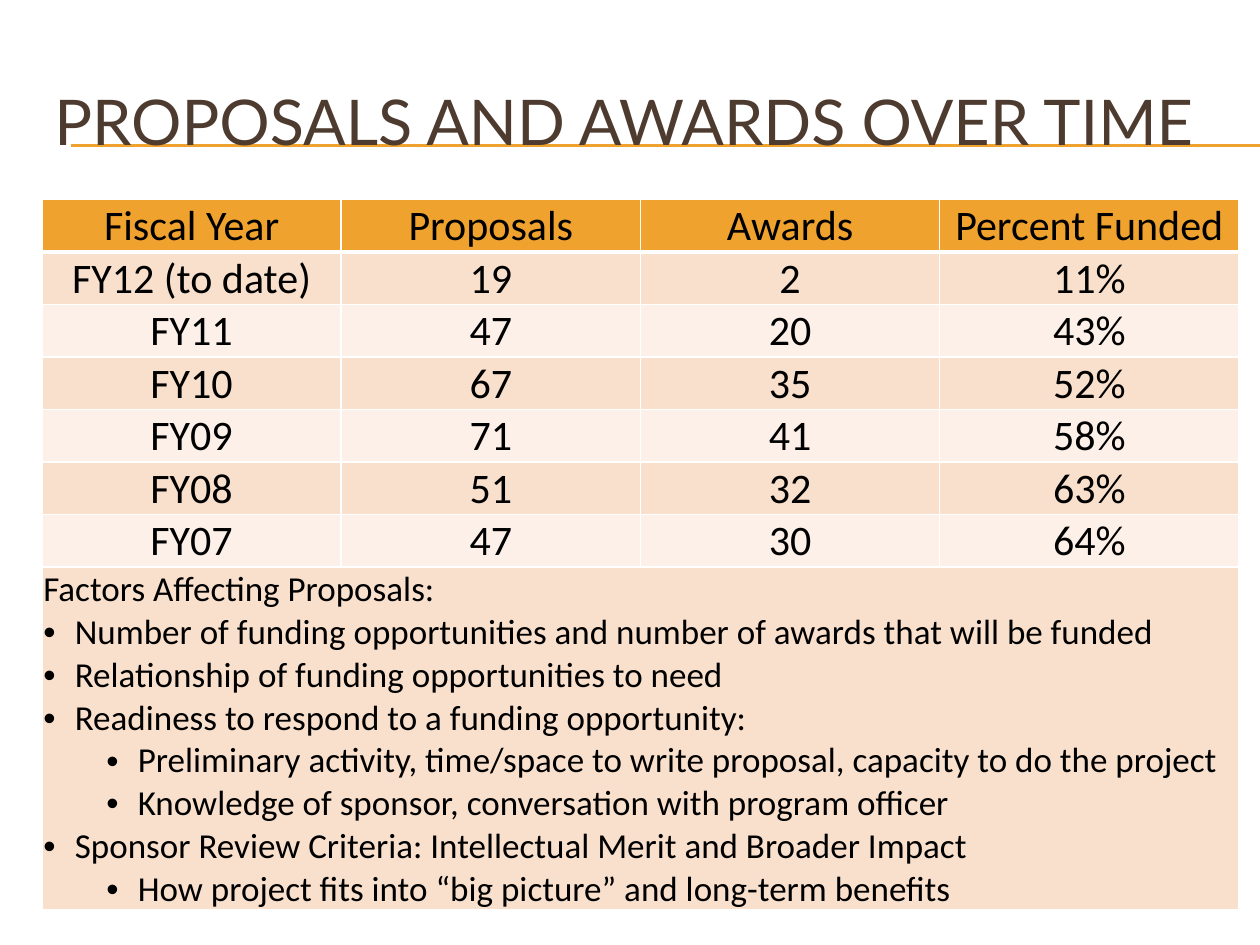
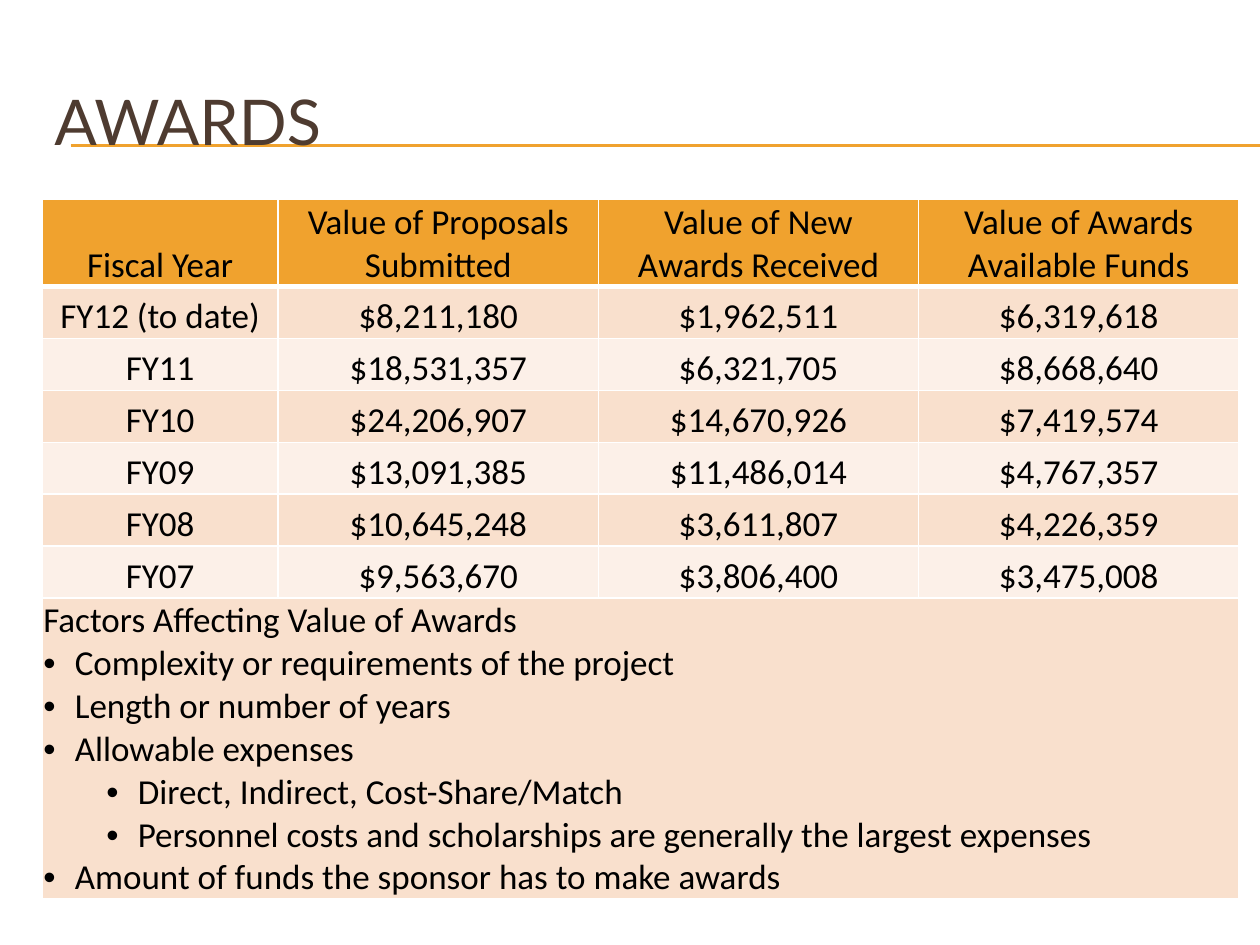
from lxml.etree import SubElement
from pptx import Presentation
from pptx.dml.color import RGBColor
from pptx.enum.shapes import MSO_CONNECTOR as Connector
from pptx.enum.text import MSO_ANCHOR as Anchor, PP_ALIGN as Align
from pptx.oxml.ns import qn
from pptx.util import Pt

COLORS = {
    "title": "4E3B30",
    "text": "000000",
    "accent": "F0A22E",
    "band_dark": "F9E0CD",
    "band_light": "FCF0E8",
    "border": "FFFFFF",
}
TITLE_FONT, BODY_FONT = "Lato", "Calibri"
PAGE_WIDTH, PAGE_HEIGHT = 720, 540
LEFT, CONTENT_WIDTH = 24, 684
TABLE_TOP = 114
RULE_LEFT, RULE_TOPS = 40.4, (82.8, 83.5)
BULLET_HANG, LEVEL_STEP = 18, 36

PROPOSAL_ROWS = [
    ("Fiscal Year", "Proposals", "Awards", "Percent Funded"),
    ("FY12 (to date)", "19", "2", "11%"),
    ("FY11", "47", "20", "43%"),
    ("FY10", "67", "35", "52%"),
    ("FY09", "71", "41", "58%"),
    ("FY08", "51", "32", "63%"),
    ("FY07", "47", "30", "64%"),
]
PROPOSAL_FACTORS = [
    (None, "Factors Affecting Proposals:"),
    (0, "Number of funding opportunities and number of awards that will be funded"),
    (0, "Relationship of funding opportunities to need"),
    (0, "Readiness to respond to a funding opportunity:"),
    (1, "Preliminary activity, time/space to write proposal, capacity to do the project"),
    (1, "Knowledge of sponsor, conversation with program officer"),
    (0, "Sponsor Review Criteria: Intellectual Merit and Broader Impact"),
    (1, "How project fits into “big picture” and long-term benefits"),
]
AWARD_ROWS = [
    ("Fiscal Year", "Value of Proposals Submitted",
     "Value of New\vAwards Received", "Value of Awards Available Funds"),
    ("FY12 (to date)", "$8,211,180", "$1,962,511", "$6,319,618"),
    ("FY11", "$18,531,357", "$6,321,705", "$8,668,640"),
    ("FY10", "$24,206,907", "$14,670,926", "$7,419,574"),
    ("FY09", "$13,091,385", "$11,486,014", "$4,767,357"),
    ("FY08", "$10,645,248", "$3,611,807", "$4,226,359"),
    ("FY07", "$9,563,670", "$3,806,400", "$3,475,008"),
]
AWARD_FACTORS = [
    (None, "Factors Affecting Value of Awards"),
    (0, "Complexity or requirements of the project"),
    (0, "Length or number of years"),
    (0, "Allowable expenses"),
    (1, "Direct, Indirect, Cost-Share/Match"),
    (1, "Personnel costs and scholarships are generally the largest expenses"),
    (0, "Amount of funds the sponsor has to make awards"),
]


def color(name):
    """Return the named palette color."""
    return RGBColor.from_string(COLORS[name])


def write(para, text, *, size, font=BODY_FONT, fill="text", align=Align.LEFT, level=None):
    """Fill a paragraph with formatted text, bulleted when a level is given."""
    para.text = text
    para.alignment = align
    for span in para.runs:
        span.font.name = font
        span.font.size = Pt(size)
        span.font.bold = False
        span.font.color.rgb = color(fill)
    if level is not None:
        para.level = level
        properties = para._p.get_or_add_pPr()
        properties.set("marL", str(Pt(BULLET_HANG + LEVEL_STEP * level)))
        properties.set("indent", str(-Pt(BULLET_HANG)))
        SubElement(properties, qn("a:buFont"), typeface="Arial")
        SubElement(properties, qn("a:buChar"), char="•")


def add_rule(page, top):
    """Draw a thin accent line from the title to the right edge."""
    rule = page.shapes.add_connector(
        Connector.STRAIGHT, Pt(RULE_LEFT), Pt(top), Pt(PAGE_WIDTH), Pt(top))
    rule.line.color.rgb = color("accent")
    rule.line.width = Pt(0.75)
    SubElement(rule._element.spPr, qn("a:effectLst"))


def add_title(page, text):
    """Add the slide title over its rules."""
    for top in RULE_TOPS:
        add_rule(page, top)
    box = page.shapes.add_textbox(Pt(LEFT), Pt(36), Pt(CONTENT_WIDTH), Pt(66))
    frame = box.text_frame
    frame.word_wrap = True
    frame.vertical_anchor = Anchor.MIDDLE
    write(frame.paragraphs[0], text, size=36, font=TITLE_FONT, fill="title")


def style_cell(cell, fill, top=1, bottom=1):
    """Set the margins, borders and fill of a cell."""
    cell.margin_left = cell.margin_right = cell.margin_top = Pt(0.75)
    cell.margin_bottom = 0
    cell.vertical_anchor = Anchor.BOTTOM
    properties = cell._tc.get_or_add_tcPr()
    for side, width in (("L", 1), ("R", 1), ("T", top), ("B", bottom)):
        line = SubElement(properties, qn(f"a:ln{side}"), w=str(Pt(width)))
        paint = SubElement(line, qn("a:solidFill"))
        SubElement(paint, qn("a:srgbClr"), val=COLORS["border"])
    cell.fill.solid()
    cell.fill.fore_color.rgb = color(fill)


def add_factor_table(page, rows, factors, *, widths, heights, size):
    """Add a banded table that ends in a full-width list of factors."""
    last = len(rows)
    table = page.shapes.add_table(
        last + 1, len(widths), Pt(LEFT), Pt(TABLE_TOP),
        Pt(sum(widths)), Pt(sum(heights))).table
    table.first_row = table.horz_banding = False
    for column, width in zip(table.columns, widths):
        column.width = Pt(width)
    for row, height in zip(table.rows, heights):
        row.height = Pt(height)
    for index, values in enumerate(rows):
        band = "accent" if index == 0 else "band_dark" if index % 2 else "band_light"
        for cell, value in zip(table.rows[index].cells, values):
            style_cell(cell, band, top=3 if index == 1 else 1, bottom=1 if index else 3)
            write(cell.text_frame.paragraphs[0], value, size=size, align=Align.CENTER)
    notes = table.cell(last, 0)
    notes.merge(table.cell(last, len(widths) - 1))
    style_cell(notes, "band_dark")
    frame = notes.text_frame
    for index, (level, text) in enumerate(factors):
        para = frame.add_paragraph() if index else frame.paragraphs[0]
        write(para, text, size=20, level=level)


def add_page(deck, title, rows, factors, **layout):
    """Add a slide with a title and a factor table."""
    page = deck.slides.add_slide(deck.slide_layouts[6])
    add_title(page, title)
    add_factor_table(page, rows, factors, **layout)


def main():
    """Build and save the deck."""
    deck = Presentation()
    deck.slide_width, deck.slide_height = Pt(PAGE_WIDTH), Pt(PAGE_HEIGHT)
    add_page(deck, "PROPOSALS AND AWARDS OVER TIME", PROPOSAL_ROWS, PROPOSAL_FACTORS,
             widths=[171] * 4, heights=[30] * 7 + [196], size=24)
    add_page(deck, "AWARDS", AWARD_ROWS, AWARD_FACTORS,
             widths=[135] + [183] * 3, heights=[49.7] + [29.7] * 6 + [172], size=20)
    deck.save("out.pptx")


if __name__ == "__main__":
    main()
